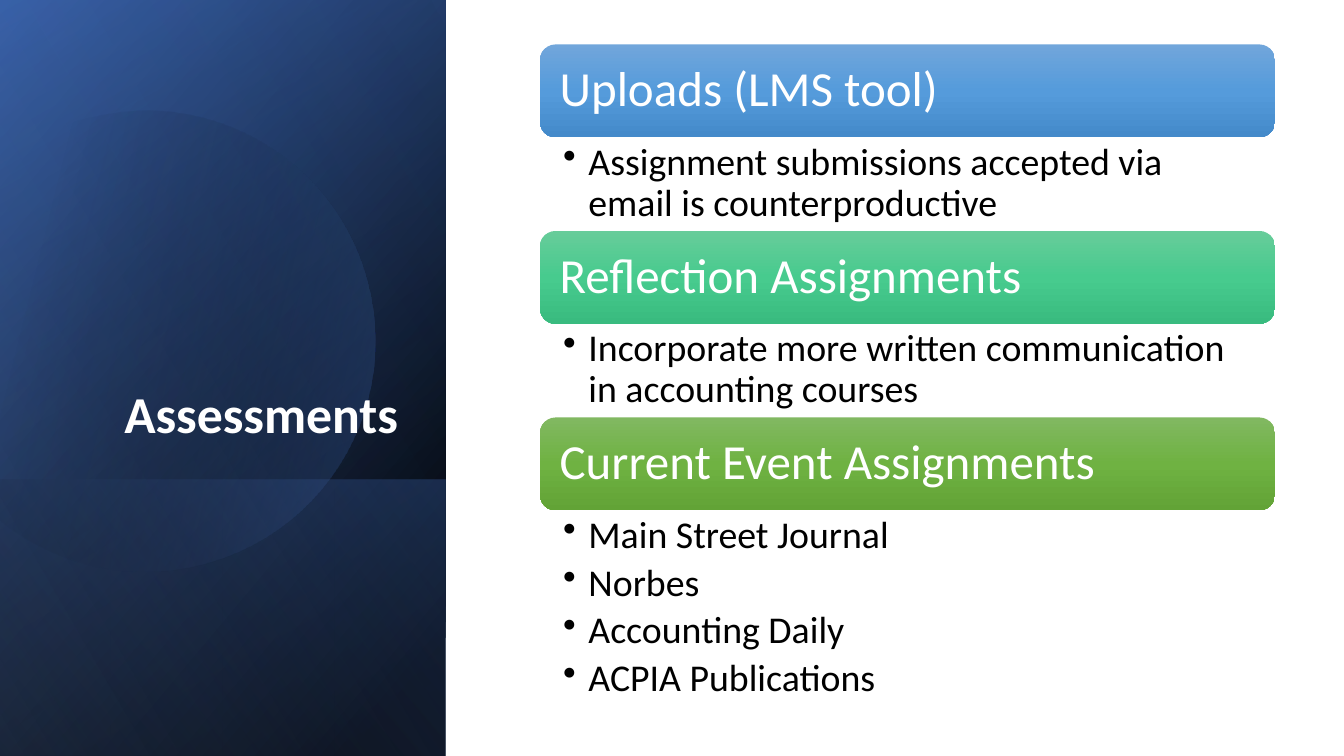
from dataclasses import dataclass
from math import cos, radians, sin

from lxml import etree
from pptx import Presentation
from pptx import util as u
from pptx.dml.color import RGBColor
from pptx.enum import shapes, text
from pptx.oxml import ns

Point = tuple[float, float]


@dataclass(frozen=True)
class Theme:
    font: str = "Calibri"
    light: str = "FFFFFF"
    dark: str = "000000"
    navy: str = "2F5597"
    blue: str = "4472C4"
    pale: str = "8FAADC"
    title_size: int = 37
    header_size: int = 35
    item_size: int = 27
    line_spacing: float = 0.9


THEME = Theme()


@dataclass(frozen=True)
class Stop:
    position: int
    color: str
    opacity: int = 100


@dataclass(frozen=True)
class Gradient:
    angle: int
    stops: tuple[Stop, ...]


@dataclass(frozen=True)
class Panel:
    left: float
    top: float
    width: float
    height: float
    gradient: Gradient


@dataclass(frozen=True)
class Card:
    heading: str
    items: tuple[str, ...]
    colors: tuple[str, str, str]
    list_height: float


def full_panel(angle: int, *stops: Stop) -> Panel:
    return Panel(-3.91, 3.91, 19.05, 11.23, Gradient(angle, stops))


BACK_PANELS = (
    full_panel(50, Stop(8, THEME.dark), Stop(100, THEME.navy)),
    full_panel(30, Stop(0, THEME.dark, 0), Stop(99, THEME.blue, 46)),
    Panel(2.13, 9.96, 6.96, 11.23,
          Gradient(130, (Stop(2, THEME.blue, 29), Stop(100, THEME.dark, 30)))),
)
FRONT_PANEL = full_panel(120, Stop(0, THEME.dark, 0), Stop(99, THEME.pale, 11))

CIRCLE_GRADIENT = Gradient(30, (Stop(29, THEME.dark, 0), Stop(100, THEME.blue, 43)))
CIRCLE_CENTER = (4.03, 8.5)
CIRCLE_TILT = 16.1
CIRCLE_START = (3.78, 2.79)
CIRCLE_SEGMENTS = (
    ((6.25, 2.84), (8.51, 4.5), (9.22, 6.99)),
    ((10.11, 10.08), (8.33, 13.28), (5.26, 14.17)),
    ((3.33, 14.73), (1.35, 14.25), (-0.08, 13.06)),
    ((-0.38, 12.78),),
    ((-0.38, 4.45),),
    ((0, 4.09),),
    ((0.58, 3.58), (1.27, 3.25), (2.03, 3.02)),
    ((2.62, 2.87), (3.2, 2.79), CIRCLE_START),
)

CARDS = (
    Card("Uploads (LMS tool)",
         ("Assignment submissions accepted via email is counterproductive",),
         ("71A6DB", "559BDB", "448ACA"), 2.36),
    Card("Reflection Assignments",
         ("Incorporate more written communication in accounting courses",),
         ("67CC9A", "47CB8E", "39BB7F"), 2.36),
    Card("Current Event Assignments",
         ("Main Street Journal", "Norbes", "Accounting Daily", "ACPIA Publications"),
         ("81B861", "6FB242", "62A336"), 5.13),
)
CARD_LEFT, CARD_TOP, CARD_WIDTH, CARD_PITCH = 13.61, 1.12, 18.52, 4.7
HEADER_HEIGHT = 2.34


def paint(shape, gradient: Gradient) -> None:
    shape.shadow.inherit = False
    shape.line.fill.background()
    shape.fill.background()
    empty_fill = shape.element.spPr.find(ns.qn("a:noFill"))
    fill = etree.Element(ns.qn("a:gradFill"), rotWithShape="1")
    stop_list = etree.SubElement(fill, ns.qn("a:gsLst"))
    for stop in gradient.stops:
        node = etree.SubElement(stop_list, ns.qn("a:gs"), pos=str(stop.position * 1000))
        color = etree.SubElement(node, ns.qn("a:srgbClr"), val=stop.color)
        if stop.opacity < 100:
            etree.SubElement(color, ns.qn("a:alpha"), val=str(stop.opacity * 1000))
    etree.SubElement(fill, ns.qn("a:lin"), ang=str(gradient.angle * 60000), scaled="0")
    shape.element.spPr.replace(empty_fill, fill)


def add_panel(page, panel: Panel) -> None:
    shape = page.shapes.add_shape(
        shapes.MSO_SHAPE.RECTANGLE, u.Cm(panel.left), u.Cm(panel.top),
        u.Cm(panel.width), u.Cm(panel.height))
    shape.rotation = 90
    shape.element.spPr.find(ns.qn("a:xfrm")).set("flipH", "1")
    paint(shape, panel.gradient)


def bezier(points: tuple[Point, ...], t: float) -> Point:
    weights = ((1 - t) ** 3, 3 * t * (1 - t) ** 2, 3 * t * t * (1 - t), t ** 3)
    return (sum(w * p[0] for w, p in zip(weights, points)),
            sum(w * p[1] for w, p in zip(weights, points)))


def tilt(point: Point) -> tuple[int, int]:
    angle = radians(CIRCLE_TILT)
    x, y = point[0] - CIRCLE_CENTER[0], point[1] - CIRCLE_CENTER[1]
    return (u.Cm(CIRCLE_CENTER[0] + x * cos(angle) - y * sin(angle)),
            u.Cm(CIRCLE_CENTER[1] + x * sin(angle) + y * cos(angle)))


def add_circle(page, steps: int = 24) -> None:
    outline = [CIRCLE_START]
    for segment in CIRCLE_SEGMENTS:
        if len(segment) == 1:
            outline.append(segment[0])
        else:
            curve = (outline[-1], *segment)
            outline.extend(bezier(curve, i / steps) for i in range(1, steps + 1))
    start, *rest = map(tilt, outline)
    builder = page.shapes.build_freeform(*start)
    builder.add_line_segments(rest, close=True)
    circle = builder.convert_to_shape()
    circle.rotation = 360 - CIRCLE_TILT
    paint(circle, CIRCLE_GRADIENT)


def style(para, size: int, color: str, align=text.PP_ALIGN.LEFT, bold: bool = False) -> None:
    para.alignment = align
    para.line_spacing = THEME.line_spacing
    para.font.name = THEME.font
    para.font.size = u.Pt(size)
    para.font.bold = bold
    para.font.color.rgb = RGBColor.from_string(color)


def add_bullet(para) -> None:
    properties = para._p.get_or_add_pPr()
    indent = u.Cm(0.64)
    properties.set("marL", str(indent))
    properties.set("indent", str(-indent))
    etree.SubElement(properties, ns.qn("a:buChar"), char="•")


def add_card(page, card: Card, top: float) -> None:
    header = page.shapes.add_shape(
        shapes.MSO_SHAPE.ROUNDED_RECTANGLE, u.Cm(CARD_LEFT), u.Cm(top),
        u.Cm(CARD_WIDTH), u.Cm(HEADER_HEIGHT))
    paint(header, Gradient(90, tuple(
        Stop(50 * i, color) for i, color in enumerate(card.colors))))
    frame = header.text_frame
    frame.margin_left = frame.margin_right = u.Cm(0.38)
    frame.vertical_anchor = text.MSO_ANCHOR.MIDDLE
    frame.text = card.heading
    style(frame.paragraphs[0], THEME.header_size, THEME.light)

    box = page.shapes.add_textbox(
        u.Cm(CARD_LEFT), u.Cm(top + HEADER_HEIGHT), u.Cm(CARD_WIDTH), u.Cm(card.list_height))
    frame = box.text_frame
    frame.word_wrap = True
    frame.margin_left, frame.margin_right = u.Cm(0.58), u.Cm(0.69)
    frame.margin_top = frame.margin_bottom = u.Cm(0.13)
    frame.text = "\n".join(card.items)
    for para in frame.paragraphs:
        add_bullet(para)
        para.space_after = u.Pt(5)
        style(para, THEME.item_size, THEME.dark)


def add_title(page) -> None:
    title = page.shapes.title
    title.element.getparent().append(title.element)
    title.left, title.top = u.Cm(1.3), u.Cm(4.67)
    title.width, title.height = u.Cm(8.99), u.Cm(6.65)
    frame = title.text_frame
    frame.auto_size = text.MSO_AUTO_SIZE.NONE
    frame.vertical_anchor = text.MSO_ANCHOR.BOTTOM
    frame.text = "Assessments"
    style(frame.paragraphs[0], THEME.title_size, THEME.light, text.PP_ALIGN.RIGHT, True)


def main() -> None:
    deck = Presentation()
    deck.slide_width, deck.slide_height = u.Cm(33.87), u.Cm(19.05)
    page = deck.slides.add_slide(deck.slide_layouts[5])
    for panel in BACK_PANELS:
        add_panel(page, panel)
    add_circle(page)
    add_panel(page, FRONT_PANEL)
    add_title(page)
    for i, card in enumerate(CARDS):
        add_card(page, card, CARD_TOP + i * CARD_PITCH)
    deck.save("out.pptx")


if __name__ == "__main__":
    main()
